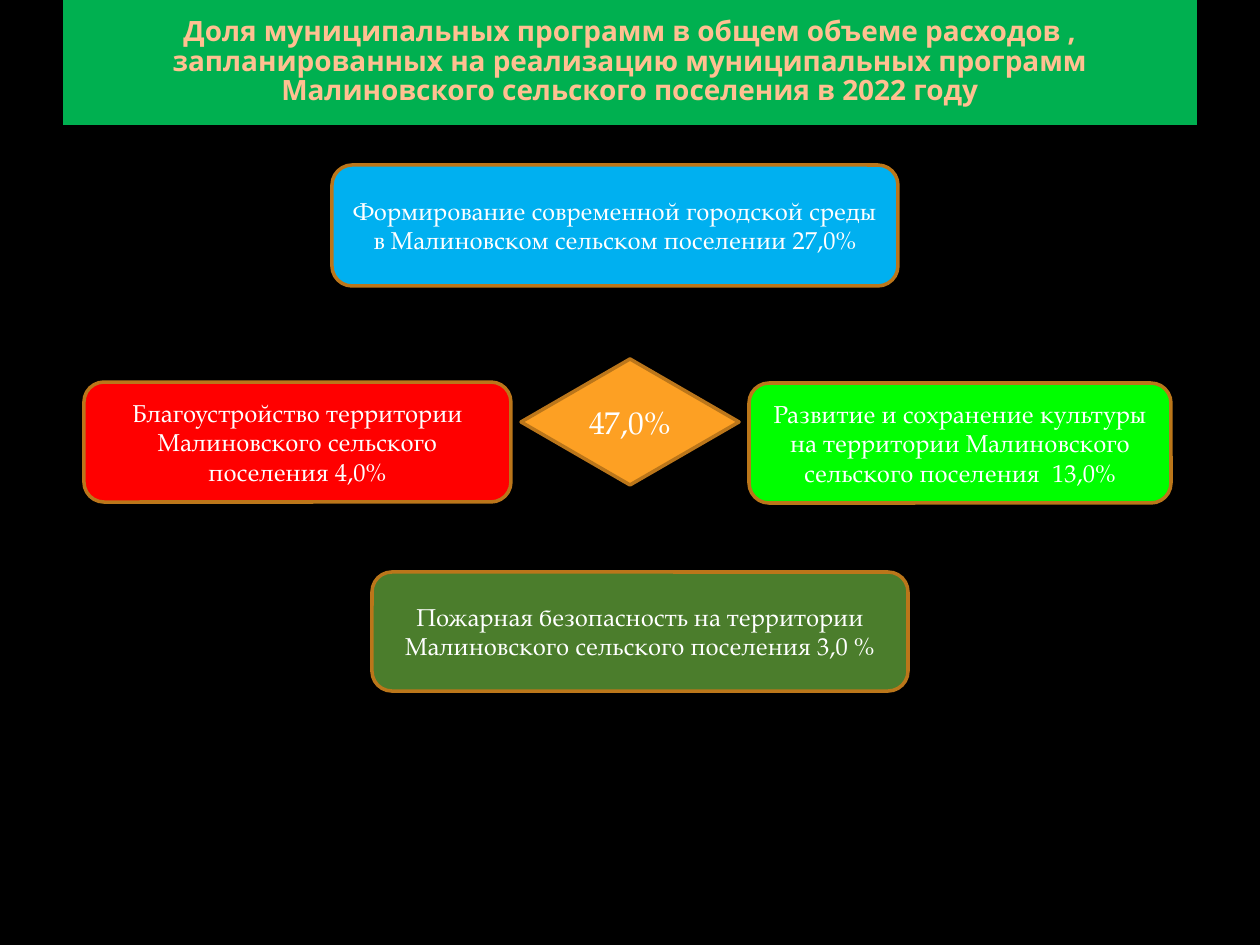
import pptx
import pptx.util
import pptx.dml.color
import pptx.enum.shapes
import pptx.enum.text

PX = 914400 / 126
BODY_FONT = "TeX Gyre Pagella"
ROUNDED = pptx.enum.shapes.MSO_SHAPE.ROUNDED_RECTANGLE
DIAMOND = pptx.enum.shapes.MSO_SHAPE.DIAMOND

# kind, (left, top, width, height), fill, text size, text
PROGRAMS = [
    (ROUNDED, (84, 382, 427, 120), "FF0000", 14,
     "Благоустройство территории Малиновского сельского поселения 4,0%"),
    (ROUNDED, (749, 383, 422, 120), "00FF00", 14,
     "Развитие и сохранение культуры на территории Малиновского "
     "сельского поселения  13,0%"),
    (ROUNDED, (332, 165, 566, 121), "00B0F0", 14,
     "Формирование современной городской среды в Малиновском "
     "сельском поселении 27,0%"),
    (ROUNDED, (372, 572, 536, 119), "4B7D2C", 14,
     "Пожарная безопасность на территории Малиновского "
     "сельского поселения 3,0 %"),
    (DIAMOND, (521, 359, 218, 126), "FDA023", 18, "47,0%"),
]


def emu(length):
    return pptx.util.Emu(round(length * PX))


def paint(fill, color):
    fill.solid()
    fill.fore_color.rgb = pptx.dml.color.RGBColor.from_string(color)


def write(shape, text, size, font, color, bold=False):
    """Put one centred paragraph into the shape and return it."""
    frame = shape.text_frame
    frame.word_wrap = True
    frame.auto_size = pptx.enum.text.MSO_AUTO_SIZE.NONE
    frame.vertical_anchor = pptx.enum.text.MSO_ANCHOR.MIDDLE
    para = frame.paragraphs[0]
    para.alignment = pptx.enum.text.PP_ALIGN.CENTER
    span = para.add_run()
    span.text = text
    span.font.size = pptx.util.Pt(size)
    span.font.name = font
    span.font.bold = bold
    paint(span.font.fill, color)
    return para


def add_title(page, box):
    title = page.shapes.title
    title.left, title.top, title.width, title.height = map(emu, box)
    paint(title.fill, "00B050")
    para = write(
        title,
        "Доля муниципальных программ в общем объеме расходов , "
        "запланированных на реализацию муниципальных программ "
        "Малиновского сельского поселения в 2022 году",
        16, "Open Sans", "FFC091", bold=True)
    para.line_spacing = 0.88


def add_program(page, kind, box, color, size, text):
    shape = page.shapes.add_shape(kind, *map(emu, box))
    shape.shadow.inherit = False
    paint(shape.fill, color)
    paint(shape.line.fill, "BB761A")
    shape.line.width = pptx.util.Pt(2)
    write(shape, text, size, BODY_FONT, "FFFFFF")


def main():
    deck = pptx.Presentation()
    deck.slide_width, deck.slide_height = emu(1260), emu(945)
    page = deck.slides.add_slide(deck.slide_layouts.get_by_name("Title Only"))
    paint(page.background.fill, "000000")
    add_title(page, (63, 0, 1134, 125))
    for program in PROGRAMS:
        add_program(page, *program)
    deck.save("out.pptx")


if __name__ == "__main__":
    main()
